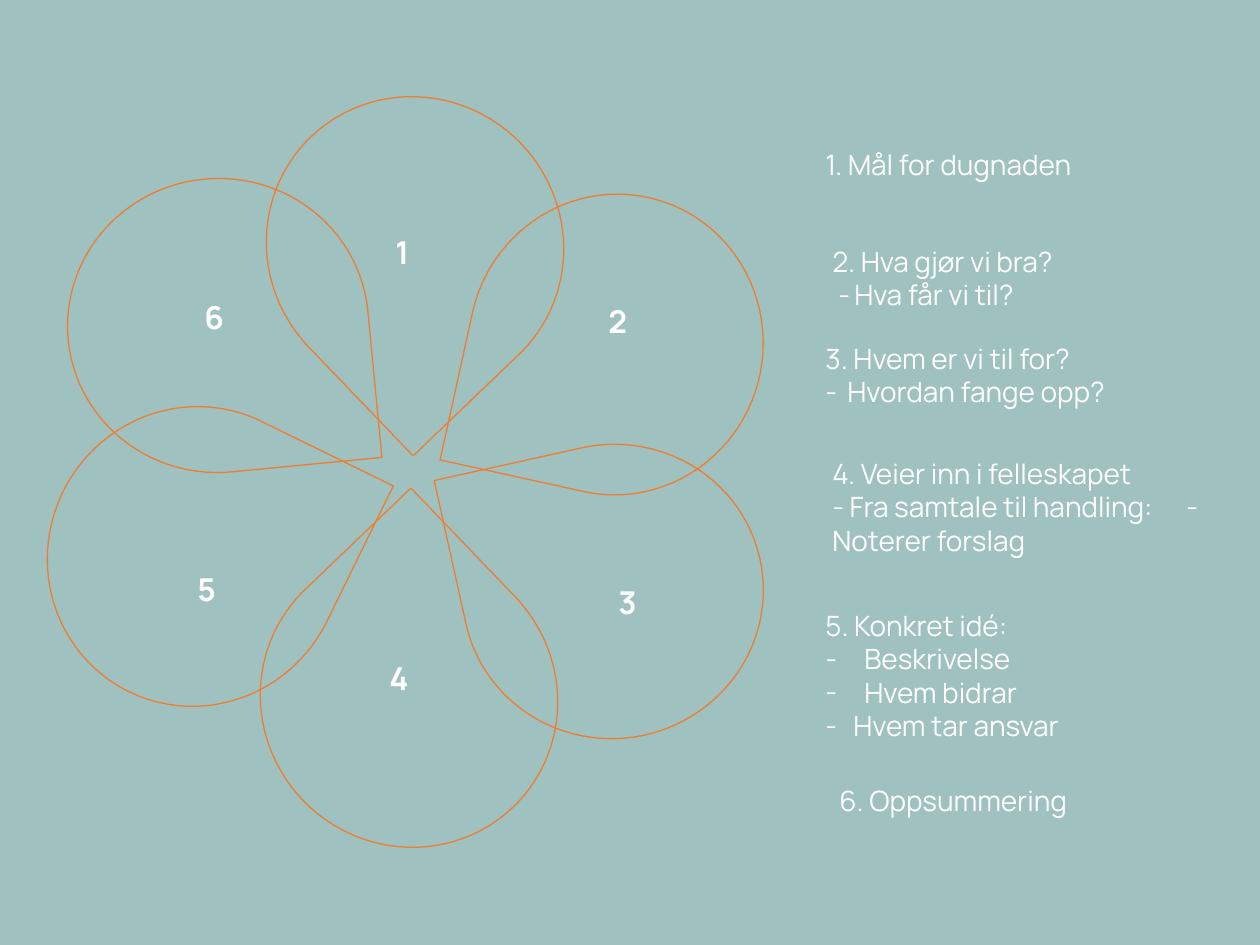
"""Build a slide with a six-petal flower and its numbered agenda."""
from dataclasses import dataclass

from lxml import etree
from pptx import Presentation
from pptx import util as u
from pptx.dml.color import RGBColor
from pptx.enum import shapes, text
from pptx.oxml import ns

PX = 914400 / 126
FONT = "Manrope"
COLORS = {"background": "9FC1C0", "petal": "ED7D31", "text": "FFFFFF"}
PETAL_WIDTH, PETAL_HEIGHT = 294, 301
NUMBER_WIDTH, NUMBER_HEIGHT = 39, 50


@dataclass(frozen=True)
class Petal:
    number: str
    left: int
    top: int
    rotation: float
    number_left: int
    number_top: int


@dataclass(frozen=True)
class Line:
    wording: str
    margin: int = 0
    hanging: int = 0
    tab: int = 0


@dataclass(frozen=True)
class Topic:
    left: int
    top: int
    width: int
    height: int
    lines: tuple[Line, ...]


PETALS = (
    Petal("4", 262, 548, 316.2, 377, 653),
    Petal("1", 268, 95, 136.2, 383, 227),
    Petal("2", 469, 194, 192.4, 596, 296),
    Petal("3", 466, 441, 257.5, 606, 577),
    Petal("6", 71, 175, 84.5, 192, 292),
    Petal("5", 48, 406, 26.1, 185, 564),
)
TOPICS = (
    Topic(813, 141, 329, 47, (Line("1. Mål for dugnaden"),)),
    Topic(820, 238, 329, 81, (
        Line("2. Hva gjør vi bra?"), Line("Hva får vi til?", 22, 16))),
    Topic(813, 335, 398, 81, (
        Line("3. Hvem er vi til for?"), Line("Hvordan fange opp?", 22, 22))),
    Topic(820, 450, 440, 149, (
        Line("4. Veier inn i felleskapet"),
        Line("- Fra samtale til handling:\t- Noterer forslag", tab=354))),
    Topic(813, 602, 432, 149, (
        Line("5. Konkret idé:"),
        Line("Beskrivelse", 39, 39),
        Line("Hvem bidrar", 39, 39),
        Line("Hvem tar ansvar", 28, 28))),
    Topic(827, 777, 433, 47, (Line("6. Oppsummering"),)),
)


def px(value: int) -> u.Emu:
    """Turn pixels into EMU."""
    return u.Emu(round(value * PX))


def color(name: str) -> RGBColor:
    """Look up a named colour."""
    return RGBColor.from_string(COLORS[name])


def format_line(paragraph, line: Line) -> None:
    """Set the dash bullet, indent and tab stop of a paragraph."""
    properties = paragraph._p.get_or_add_pPr()
    if line.hanging:
        properties.set("marL", str(px(line.margin)))
        properties.set("indent", str(-px(line.hanging)))
        etree.SubElement(properties, ns.qn("a:buFont"), typeface=FONT)
        etree.SubElement(properties, ns.qn("a:buChar"), char="-")
    if line.tab:
        tabs = etree.SubElement(properties, ns.qn("a:tabLst"))
        etree.SubElement(tabs, ns.qn("a:tab"), pos=str(px(line.tab)), algn="l")


def add_text(slide, topic: Topic, size: int, bold: bool = False) -> None:
    """Add a text box holding the lines of a topic."""
    shape = slide.shapes.add_textbox(
        px(topic.left), px(topic.top), px(topic.width), px(topic.height))
    frame = shape.text_frame
    frame.word_wrap = True
    frame.auto_size = text.MSO_AUTO_SIZE.SHAPE_TO_FIT_TEXT
    frame.text = "\n".join(line.wording for line in topic.lines)
    for paragraph, line in zip(frame.paragraphs, topic.lines):
        format_line(paragraph, line)
        for run in paragraph.runs:
            run.font.name = FONT
            run.font.size = u.Pt(size)
            run.font.bold = bold
            run.font.color.rgb = color("text")


def add_petal(slide, petal: Petal) -> None:
    """Add the outlined teardrop of a petal."""
    shape = slide.shapes.add_shape(
        shapes.MSO_SHAPE.TEAR, px(petal.left), px(petal.top),
        px(PETAL_WIDTH), px(PETAL_HEIGHT))
    shape.rotation = petal.rotation
    shape.shadow.inherit = False
    shape.fill.background()
    shape.line.color.rgb = color("petal")
    shape.line.width = u.Pt(0.75)


def main() -> None:
    """Build and save the presentation."""
    presentation = Presentation()
    presentation.slide_width, presentation.slide_height = px(1260), px(945)
    slide = presentation.slides.add_slide(presentation.slide_layouts[6])
    slide.background.fill.solid()
    slide.background.fill.fore_color.rgb = color("background")
    for petal in PETALS:
        add_petal(slide, petal)
    for topic in TOPICS:
        add_text(slide, topic, 16)
    for petal in PETALS:
        number = Topic(petal.number_left, petal.number_top, NUMBER_WIDTH,
                       NUMBER_HEIGHT, (Line(petal.number),))
        add_text(slide, number, 18, bold=True)
    presentation.save("out.pptx")


if __name__ == "__main__":
    main()
